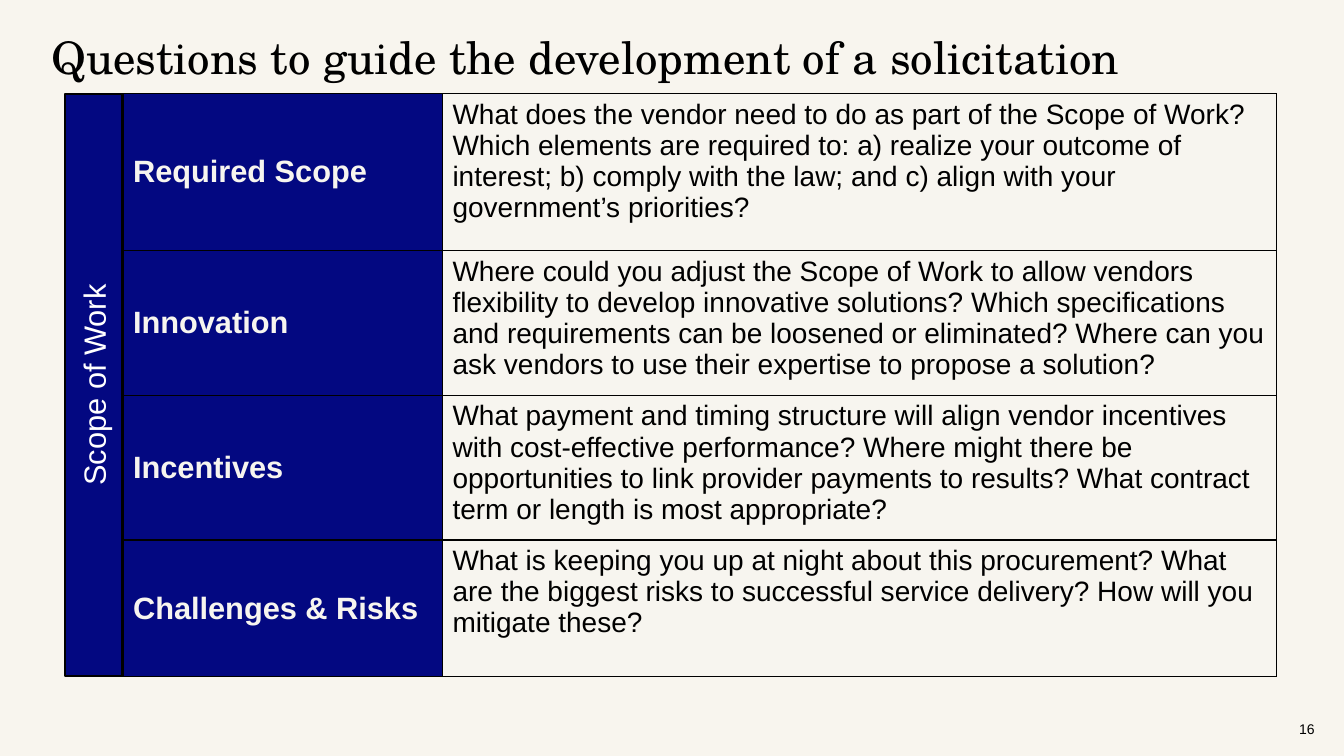
from dataclasses import dataclass

from lxml import etree
from pptx import Presentation
from pptx.dml.color import RGBColor
from pptx.enum.shapes import MSO_SHAPE
from pptx.enum.text import MSO_ANCHOR, PP_ALIGN
from pptx.oxml.ns import qn
from pptx.util import Cm, Pt

RECT = MSO_SHAPE.RECTANGLE
TOP, MIDDLE = MSO_ANCHOR.TOP, MSO_ANCHOR.MIDDLE
LEFT, CENTER = PP_ALIGN.LEFT, PP_ALIGN.CENTER


@dataclass(frozen=True)
class Theme:
    paper: str = "F8F5EE"
    cell: str = "F7F5EF"
    navy: str = "030881"
    black: str = "000000"
    white: str = "FFFFFF"
    serif: str = "TeX Gyre Schola"
    sans: str = "Arial"
    title: int = 32
    label: int = 22
    body: int = 20
    number: int = 10


T = Theme()

QUESTIONS = [
    ("Required Scope",
     "What does the vendor need to do as part of the Scope of Work? Which elements "
     "are required to: a) realize your outcome of interest; b) comply with the law; "
     "and c) align with your government’s priorities?"),
    ("Innovation",
     "Where could you adjust the Scope of Work to allow vendors flexibility to develop "
     "innovative solutions? Which specifications and requirements can be loosened or "
     "eliminated? Where can you ask vendors to use their expertise to propose a solution?"),
    ("Incentives",
     "What payment and timing structure will align vendor incentives with cost-effective "
     "performance? Where might there be opportunities to link provider payments to "
     "results? What contract term or length is most appropriate?"),
    ("Challenges & Risks",
     "What is keeping you up at night about this procurement? What are the biggest risks "
     "to successful service delivery? How will you mitigate these?"),
]
COLUMN_WIDTHS = (8.05, 21.01)
ROW_HEIGHTS = (3.96, 3.48, 3.48, 3.45)


def rgb(value):
    return RGBColor.from_string(value)


def write(tf, text, size, color, font=T.sans, bold=False, align=LEFT):
    p = tf.paragraphs[0]
    p.alignment = align
    r = p.add_run()
    r.text = text
    for name, value in {"size": Pt(size), "name": font, "bold": bold}.items():
        setattr(r.font, name, value)
    r.font.color.rgb = rgb(color)


def add_text(slide, box, text, size, font, **frame):
    tf = slide.shapes.add_textbox(*map(Cm, box)).text_frame
    for name, value in {"word_wrap": True, **frame}.items():
        setattr(tf, name, value)
    write(tf, text, size, T.black, font)


def add_borders(cell):
    tc_pr = cell._tc.get_or_add_tcPr()
    for side in ("lnL", "lnR", "lnT", "lnB"):
        ln = etree.SubElement(tc_pr, qn(f"a:{side}"), w=str(Pt(1)))
        fill = etree.SubElement(ln, qn("a:solidFill"))
        etree.SubElement(fill, qn("a:srgbClr"), val=T.black)


def fill_cell(cell, text, size, color, fill, bold, anchor):
    add_borders(cell)
    cell.fill.solid()
    cell.fill.fore_color.rgb = rgb(fill)
    cell.vertical_anchor = anchor
    write(cell.text_frame, text, size, color, bold=bold)


def add_question_table(slide, left, top):
    table = slide.shapes.add_table(
        len(QUESTIONS), len(COLUMN_WIDTHS), Cm(left), Cm(top),
        Cm(sum(COLUMN_WIDTHS)), Cm(sum(ROW_HEIGHTS))).table
    table.first_row = table.horz_banding = False
    for column, width in zip(table.columns, COLUMN_WIDTHS):
        column.width = Cm(width)
    for i, (height, (topic, question)) in enumerate(zip(ROW_HEIGHTS, QUESTIONS)):
        table.rows[i].height = Cm(height)
        fill_cell(table.cell(i, 0), topic, T.label, T.cell, T.navy, True, MIDDLE)
        fill_cell(table.cell(i, 1), question, T.body, T.black, T.cell, False, TOP)


def add_side_banner(slide, box, text):
    sp = slide.shapes.add_shape(RECT, *map(Cm, box))
    sp.rotation = 270
    sp.shadow.inherit = False
    sp.fill.solid()
    sp.fill.fore_color.rgb = rgb(T.navy)
    sp.line.color.rgb = rgb(T.black)
    sp.line.width = Pt(1.5)
    sp.text_frame.vertical_anchor = MIDDLE
    write(sp.text_frame, text, T.label, T.white, align=CENTER)


def main():
    prs = Presentation()
    prs.slide_width, prs.slide_height = Cm(33.87), Cm(19.05)
    slide = prs.slides.add_slide(prs.slide_layouts[6])
    slide.background.fill.solid()
    slide.background.fill.fore_color.rgb = rgb(T.paper)

    # Slide number and title
    add_text(slide, (32.49, 17.86, 1.38, 1.02), "16", T.number, T.sans,
             vertical_anchor=MIDDLE)
    add_text(slide, (1.04, 0.74, 30.48, 1.5),
             "Questions to guide the development of a solicitation",
             T.title, T.serif, margin_top=0)

    # Questions with the rotated banner beside them
    add_question_table(slide, 3.1, 2.36)
    add_side_banner(slide, (-4.98, 8.99, 14.68, 1.42), "Scope of Work")

    prs.save("out.pptx")


if __name__ == "__main__":
    main()
